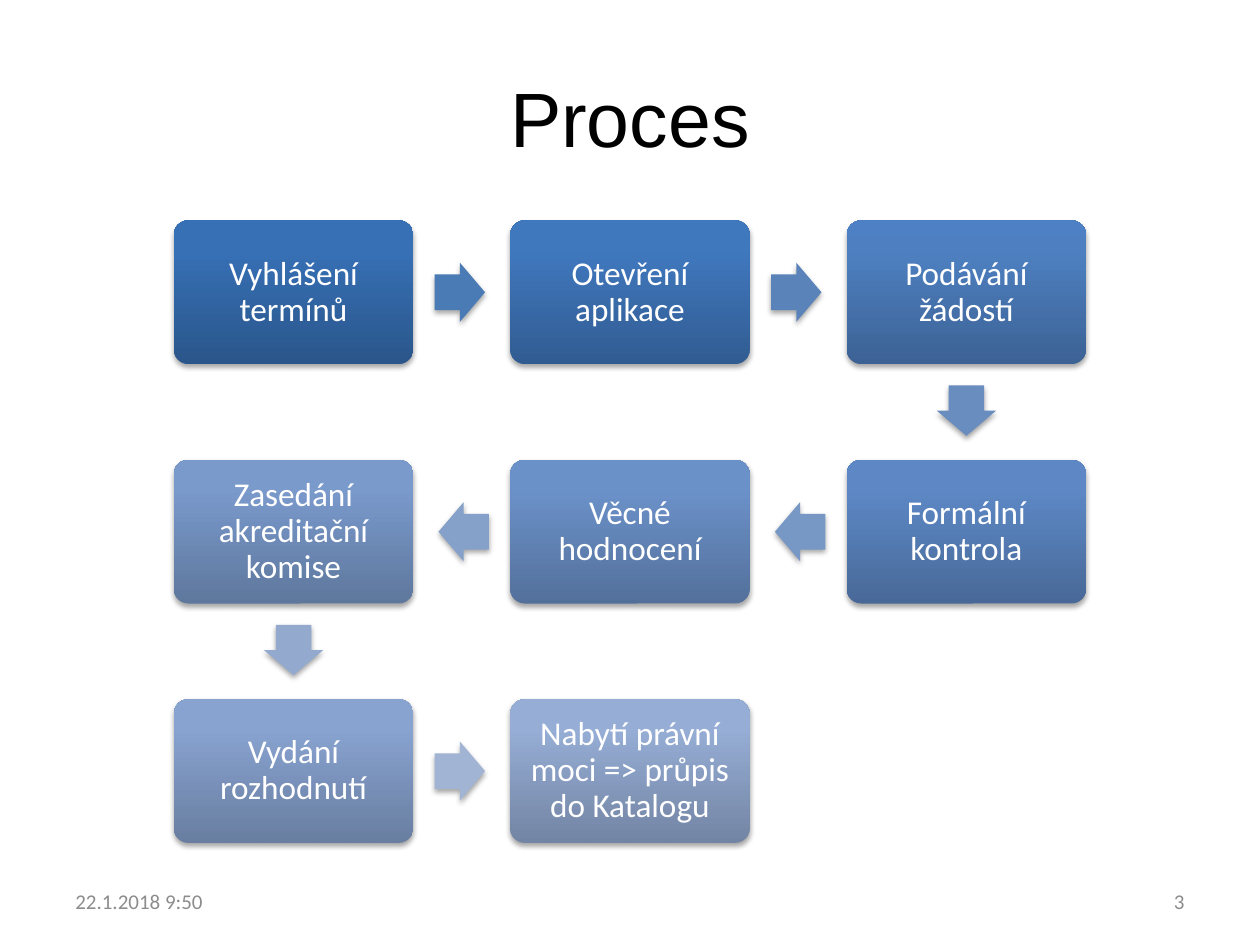
from copy import deepcopy

from lxml import etree
from pptx import Presentation
from pptx.dml.color import RGBColor
from pptx.enum.shapes import MSO_SHAPE as Shape
from pptx.enum.text import MSO_ANCHOR as Anchor, PP_ALIGN as Align
from pptx.oxml.ns import qn
from pptx.util import Inches, Pt

BLACK = RGBColor(0x00, 0x00, 0x00)
WHITE = RGBColor(0xFF, 0xFF, 0xFF)
GRAY = RGBColor(0x8C, 0x8C, 0x8C)

BOX_WIDTH, BOX_HEIGHT = 1.9, 1.14
ARROW_LENGTH, ARROW_WIDTH = 0.4, 0.47
ARROW_GAP = 0.17
LEFT, TOP = 1.38, 1.75
COLUMN_STEP, ROW_STEP = 2.67, 1.9

# Text, column, row, gradient from bottom to top, colour of the arrow that follows
STEPS = [
    ("Vyhlášení termínů", 0, 0, ("2A568B", "3770B5", "3570B8"), "4B7BB5"),
    ("Otevření aplikace", 1, 0, ("315C92", "4078BE", "3E78C1"), "5A84B9"),
    ("Podávání žádostí", 2, 0, ("3C6295", "4E80C1", "4D80C5"), "698DBE"),
    ("Formální kontrola", 2, 1, ("486998", "5D88C5", "5B89C8"), "7797C4"),
    ("Věcné hodnocení", 1, 1, ("53709B", "6B91C9", "6A92CB"), "85A0C9"),
    ("Zasedání akreditační komise", 0, 1, ("5E779D", "7A9ACC", "799BCF"), "93AACE"),
    ("Vydání rozhodnutí", 0, 2, ("697EA1", "88A3D0", "87A4D3"), "A1B4D4"),
    ("Nabytí právní moci => průpis do Katalogu", 1, 2, ("7385A4", "96ADD5", "95ADD7"), None),
]


def write(shape, text, size, color, align, font_name="Calibri"):
    frame = shape.text_frame
    frame.word_wrap = True
    frame.vertical_anchor = Anchor.MIDDLE
    paragraph = frame.paragraphs[0]
    paragraph.alignment = align
    run = paragraph.add_run()
    run.text = text
    for name, value in {"size": Pt(size), "name": font_name}.items():
        setattr(run.font, name, value)
    run.font.color.rgb = color
    return frame


def finish_outline(shape):
    """Remove the line and add the soft shadow below the shape."""
    shape.line.fill.background()
    shape.shadow.inherit = False
    effects = shape._element.spPr.find(qn("a:effectLst"))
    shadow = etree.SubElement(effects, qn("a:outerShdw"), blurRad=str(Pt(3.1)),
                              dist=str(Pt(1.8)), dir="5400000", rotWithShape="0")
    color = etree.SubElement(shadow, qn("a:srgbClr"), val="000000")
    etree.SubElement(color, qn("a:alpha"), val="35000")


presentation = Presentation()
presentation.slide_width = Inches(10)
presentation.slide_height = Inches(7.5)
slide = presentation.slides.add_slide(presentation.slide_layouts[6])
shapes = slide.shapes

for text, left, top, width, height, size, color, align, font_name in [
    ("Proces", 0.5, 0.3, 9, 1.25, 44, BLACK, Align.CENTER, "Arial"),
    ("22.1.2018 9:50", 0.5, 6.95, 2.33, 0.4, 12, GRAY, Align.LEFT, "Calibri"),
    ("3", 7.17, 6.95, 2.33, 0.4, 12, GRAY, Align.RIGHT, "Calibri"),
]:
    box = shapes.add_textbox(Inches(left), Inches(top), Inches(width), Inches(height))
    write(box, text, size, color, align, font_name)

for index, (text, column, row, gradient, arrow_color) in enumerate(STEPS):
    left = LEFT + column * COLUMN_STEP
    top = TOP + row * ROW_STEP
    box = shapes.add_shape(Shape.ROUNDED_RECTANGLE, Inches(left), Inches(top),
                           Inches(BOX_WIDTH), Inches(BOX_HEIGHT))
    box.adjustments[0] = 0.1
    box.fill.gradient()
    box.fill.gradient_angle = 90
    stop_list = box._element.spPr.find(qn("a:gradFill")).find(qn("a:gsLst"))
    stop_list.append(deepcopy(stop_list[0]))
    for stop, position, color in zip(box.fill.gradient_stops, (0, 0.8, 1), gradient):
        stop.position = position
        stop.color.rgb = RGBColor.from_string(color)
    finish_outline(box)
    frame = write(box, text, 19, WHITE, Align.CENTER)
    frame.paragraphs[0].line_spacing = 0.9
    for side in ("left", "top", "right", "bottom"):
        setattr(frame, f"margin_{side}", Inches(0.08))

    if arrow_color is None:
        continue
    next_column, next_row = STEPS[index + 1][1:3]
    across, down = next_column - column, next_row - row
    reach = ARROW_GAP + ARROW_LENGTH / 2
    center_x = left + BOX_WIDTH / 2 + across * (BOX_WIDTH / 2 + reach)
    center_y = top + BOX_HEIGHT / 2 + down * (BOX_HEIGHT / 2 + reach)
    arrow = shapes.add_shape(Shape.RIGHT_ARROW, Inches(center_x - ARROW_LENGTH / 2),
                             Inches(center_y - ARROW_WIDTH / 2),
                             Inches(ARROW_LENGTH), Inches(ARROW_WIDTH))
    arrow.adjustments[0] = 0.6
    arrow.adjustments[1] = 0.5
    arrow.rotation = 90 if down else 180 if across < 0 else 0
    arrow.fill.solid()
    arrow.fill.fore_color.rgb = RGBColor.from_string(arrow_color)
    finish_outline(arrow)

presentation.save("out.pptx")
